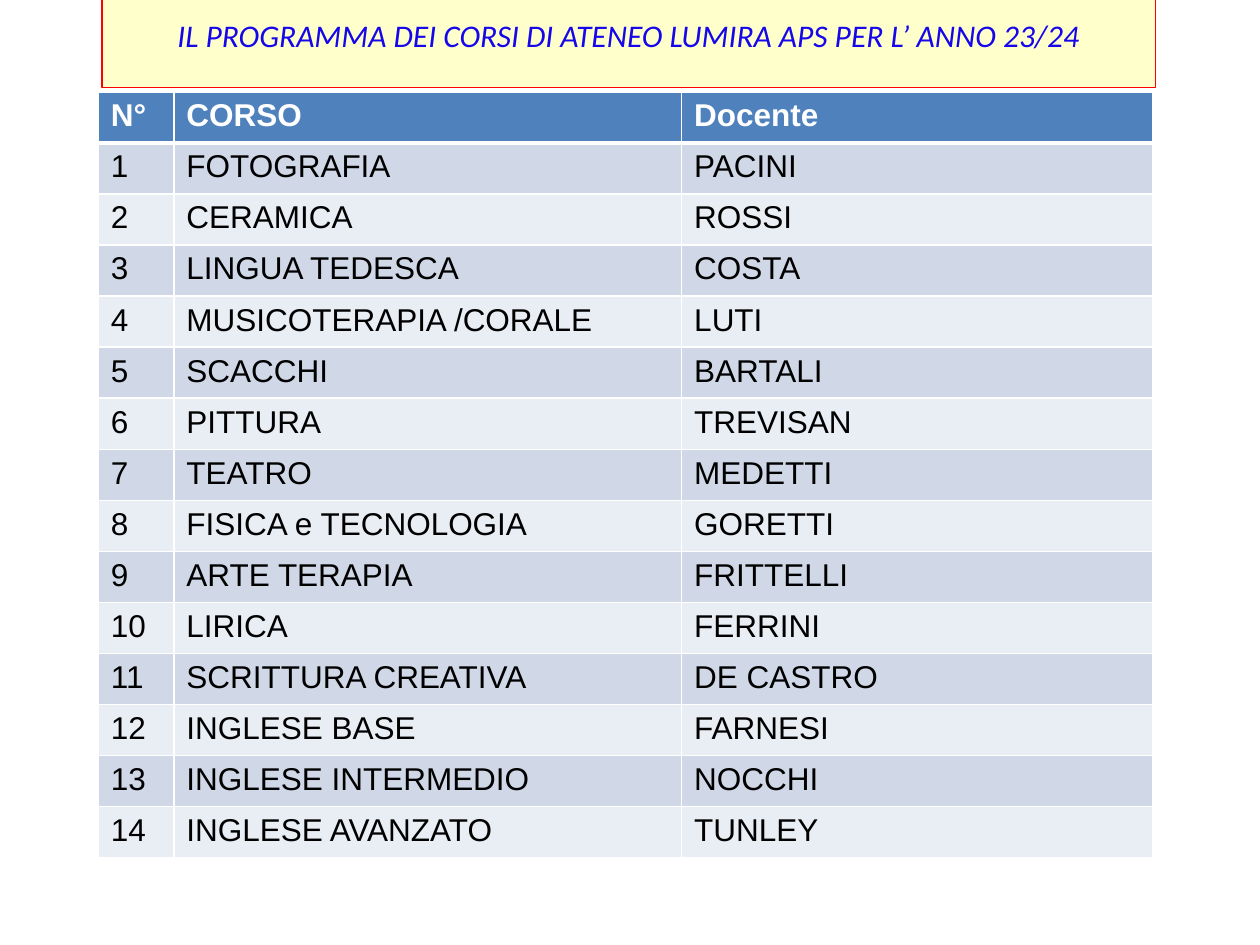
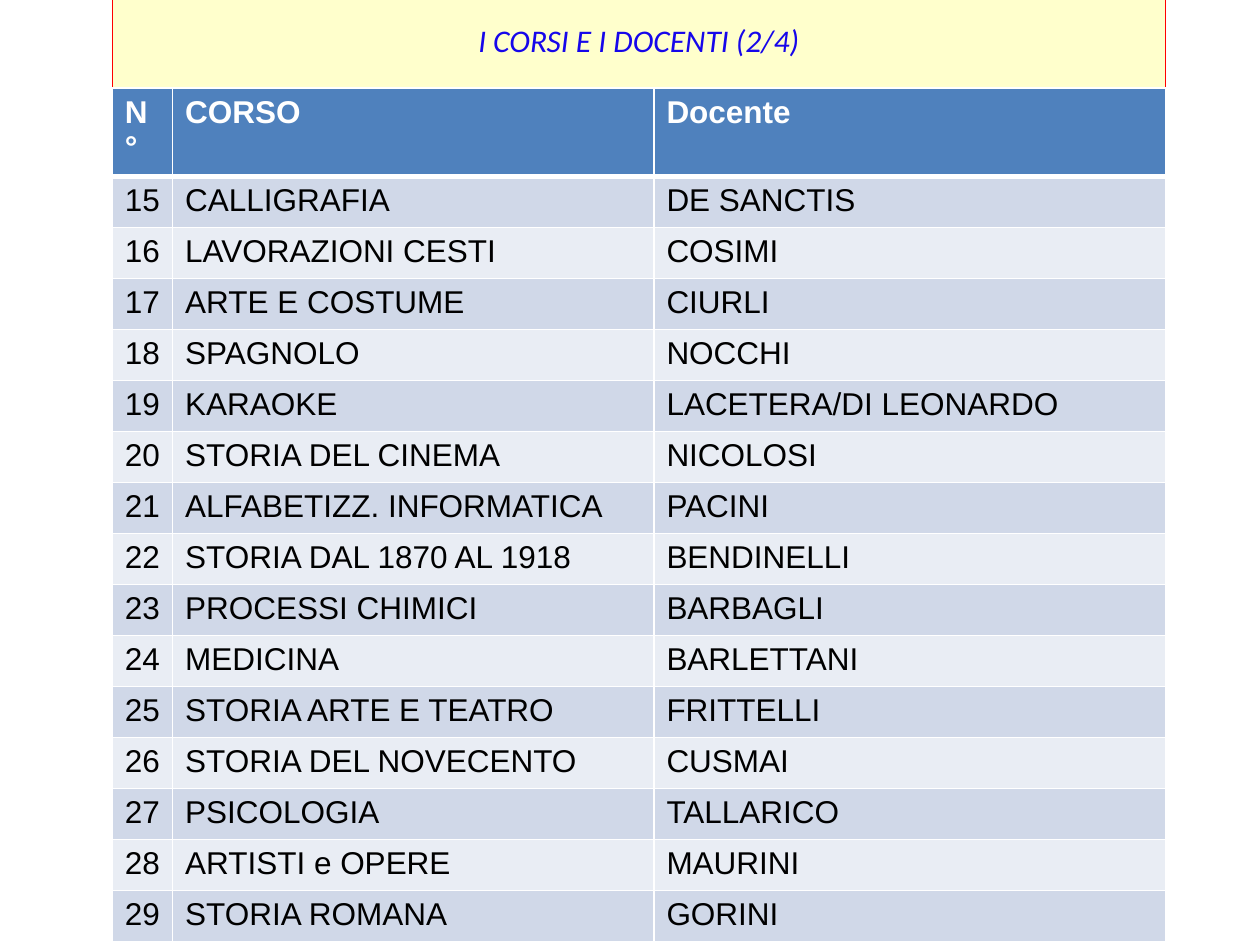
"""Build two slides that list the courses and their teachers."""
import pptx
import pptx.dml.color
import pptx.enum.text
import pptx.oxml.ns
import pptx.util
from lxml import etree

Inches = pptx.util.Inches
Pt = pptx.util.Pt
RGBColor = pptx.dml.color.RGBColor

WHITE = RGBColor(0xFF, 0xFF, 0xFF)
BLACK = RGBColor(0x00, 0x00, 0x00)
RED = RGBColor(0xFF, 0x00, 0x00)
TITLE_BLUE = RGBColor(0x16, 0x06, 0xEA)
TITLE_YELLOW = RGBColor(0xFF, 0xFF, 0xCC)
HEADER_BLUE = RGBColor(0x4F, 0x81, 0xBD)
BANDS = (RGBColor(0xD0, 0xD8, 0xE8), RGBColor(0xE9, 0xED, 0xF4))

HEADINGS = ("N°", "CORSO", "Docente")
WIDTH = 8.36
TITLE_HEIGHT = 0.4
TEXT_SIZE = Pt(18)

PAGES = [
    {
        "title": "IL PROGRAMMA DEI CORSI DI ATENEO LUMIRA APS PER L’ ANNO 23/24",
        "title_at": (0.81, 0.08),
        "table_at": (0.78, 0.73),
        "table_height": 6.08,
        "columns": (0.6, 4.03, 3.74),
        "first_number": 1,
        "courses": [
            ("FOTOGRAFIA", "PACINI"),
            ("CERAMICA", "ROSSI"),
            ("LINGUA TEDESCA", "COSTA"),
            ("MUSICOTERAPIA /CORALE", "LUTI"),
            ("SCACCHI", "BARTALI"),
            ("PITTURA", "TREVISAN"),
            ("TEATRO", "MEDETTI"),
            ("FISICA e TECNOLOGIA", "GORETTI"),
            ("ARTE TERAPIA", "FRITTELLI"),
            ("LIRICA", "FERRINI"),
            ("SCRITTURA CREATIVA", "DE CASTRO"),
            ("INGLESE BASE", "FARNESI"),
            ("INGLESE INTERMEDIO", "NOCCHI"),
            ("INGLESE AVANZATO", "TUNLEY"),
        ],
    },
    {
        "title": "I CORSI E I DOCENTI (2/4)",
        "title_at": (0.89, 0.12),
        "table_at": (0.89, 0.7),
        "table_height": 6.48,
        "columns": (0.48, 3.82, 4.06),
        "first_number": 15,
        "courses": [
            ("CALLIGRAFIA", "DE SANCTIS"),
            ("LAVORAZIONI CESTI", "COSIMI"),
            ("ARTE E COSTUME", "CIURLI"),
            ("SPAGNOLO", "NOCCHI"),
            ("KARAOKE", "LACETERA/DI LEONARDO"),
            ("STORIA DEL CINEMA", "NICOLOSI"),
            ("ALFABETIZZ. INFORMATICA", "PACINI"),
            ("STORIA DAL 1870 AL 1918", "BENDINELLI"),
            ("PROCESSI CHIMICI", "BARBAGLI"),
            ("MEDICINA", "BARLETTANI"),
            ("STORIA ARTE E TEATRO", "FRITTELLI"),
            ("STORIA DEL NOVECENTO", "CUSMAI"),
            ("PSICOLOGIA", "TALLARICO"),
            ("ARTISTI e OPERE", "MAURINI"),
            ("STORIA ROMANA", "GORINI"),
        ],
    },
]


def add_text(para, text, font_name, color, bold=False, italic=False):
    span = para.add_run()
    span.text = text
    font = span.font
    font.name, font.size = font_name, TEXT_SIZE
    font.bold, font.italic = bold, italic
    font.color.rgb = color


def set_title(page, text, left, top):
    box = page.shapes.title
    box.left, box.top = Inches(left), Inches(top)
    box.width, box.height = Inches(WIDTH), Inches(TITLE_HEIGHT)
    box.fill.solid()
    box.fill.fore_color.rgb = TITLE_YELLOW
    box.line.color.rgb = RED
    box.line.width = Pt(0.75)
    frame = box.text_frame
    frame.word_wrap = True
    frame.auto_size = pptx.enum.text.MSO_AUTO_SIZE.SHAPE_TO_FIT_TEXT
    para = frame.paragraphs[0]
    para.alignment = pptx.enum.text.PP_ALIGN.CENTER
    add_text(para, text, "Calibri", TITLE_BLUE, italic=True)


def set_borders(cell, top, bottom):
    qn = pptx.oxml.ns.qn
    properties = cell._tc.get_or_add_tcPr()
    for side, points in (("L", 1), ("R", 1), ("T", top), ("B", bottom)):
        line = etree.SubElement(properties, qn(f"a:ln{side}"), w=str(Pt(points)))
        fill = etree.SubElement(line, qn("a:solidFill"))
        etree.SubElement(fill, qn("a:srgbClr"), val=str(WHITE))


def add_course_table(page, content):
    numbered = [
        (str(number), *course)
        for number, course in enumerate(content["courses"], content["first_number"])
    ]
    rows = [HEADINGS, *numbered]
    left, top = content["table_at"]
    table = page.shapes.add_table(
        len(rows), len(HEADINGS), Inches(left), Inches(top),
        Inches(WIDTH), Inches(content["table_height"]),
    ).table
    for column, width in zip(table.columns, content["columns"]):
        column.width = Inches(width)
    for row_index, values in enumerate(rows):
        is_header = row_index == 0
        for column_index, value in enumerate(values):
            cell = table.cell(row_index, column_index)
            set_borders(cell, 3 if row_index == 1 else 1, 3 if is_header else 1)
            cell.fill.solid()
            cell.fill.fore_color.rgb = (
                HEADER_BLUE if is_header else BANDS[(row_index - 1) % 2]
            )
            add_text(
                cell.text_frame.paragraphs[0], value, "Arial",
                WHITE if is_header else BLACK, bold=is_header,
            )


def main():
    deck = pptx.Presentation()
    deck.slide_width, deck.slide_height = Inches(10), Inches(7.5)
    title_only = deck.slide_layouts.get_by_name("Title Only")
    for content in PAGES:
        page = deck.slides.add_slide(title_only)
        set_title(page, content["title"], *content["title_at"])
        add_course_table(page, content)
    deck.save("out.pptx")


if __name__ == "__main__":
    main()
